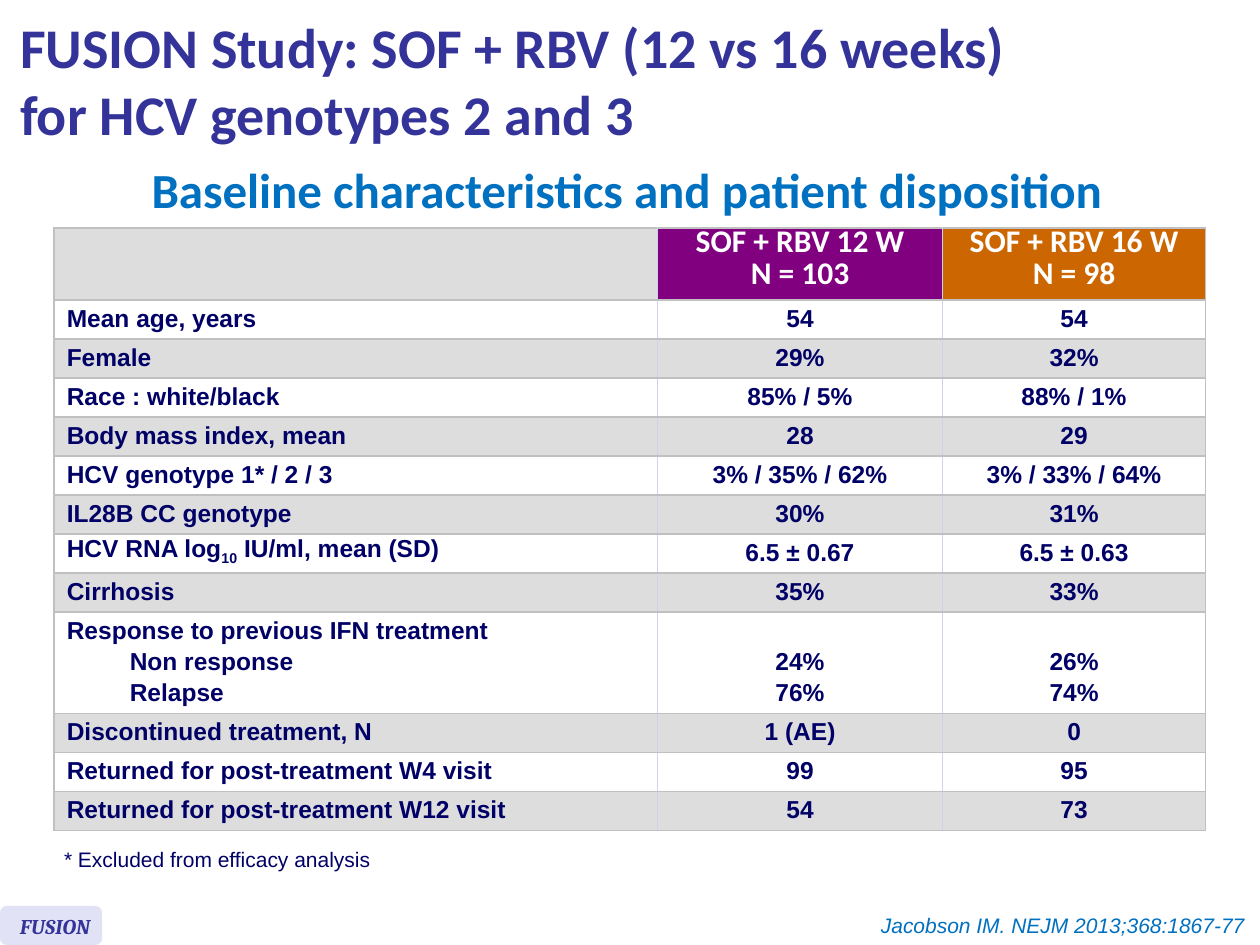
from dataclasses import dataclass
from typing import NamedTuple

from lxml import etree
from pptx import Presentation
from pptx import util as u
from pptx.dml.color import RGBColor
from pptx.enum import shapes, text
from pptx.oxml.ns import qn

COLS, ROWS = 100, 75
SIDE, LEFT, MID = text.PP_ALIGN.RIGHT, text.PP_ALIGN.LEFT, text.PP_ALIGN.CENTER


@dataclass(frozen=True)
class Theme:
    navy: str = "000066"
    indigo: str = "333399"
    blue: str = "0070C0"
    white: str = "FFFFFF"
    band: str = "DDDDDD"
    purple: str = "800080"
    orange: str = "CC6600"
    badge: str = "E2E2F6"
    grey: str = "C0C0C0"
    lilac: str = "D0D0F0"
    head: str = "Calibri"
    body: str = "Arial"
    serif: str = "Cambria"
    title: int = 32
    sub: int = 28
    top: int = 18
    cell: int = 14
    note: int = 12


class Box(NamedTuple):
    x: float
    y: float
    w: float
    h: float


class Row(NamedTuple):
    label: str
    short: str
    long: str
    high: float = 3.1


T = Theme()
TABLE = Box(4.3, 18.1, 91.4, 48)
WIDTHS = (47.9, 22.6, 20.9)
DATA = (
    Row("", "SOF + RBV 12 W\nN = 103", "SOF + RBV 16 W\nN = 98", 5.7),
    Row("Mean age, years", "54", "54"),
    Row("Female", "29%", "32%"),
    Row("Race : white/black", "85% / 5%", "88% / 1%"),
    Row("Body mass index, mean", "28", "29"),
    Row("HCV genotype 1* / 2 / 3", "3% / 35% / 62%", "3% / 33% / 64%"),
    Row("IL28B CC genotype", "30%", "31%"),
    Row("HCV RNA log_10_ IU/ml, mean (SD)", "6.5 ± 0.67", "6.5 ± 0.63"),
    Row("Cirrhosis", "35%", "33%"),
    Row("Response to previous IFN treatment\n>Non response\n>Relapse",
        "24%\n76%", "26%\n74%", 8),
    Row("Discontinued treatment, N", "1 (AE)", "0"),
    Row("Returned for post-treatment W4 visit", "99", "95"),
    Row("Returned for post-treatment W12 visit", "54", "73"),
)


def across(n: float) -> int:
    return round(u.Inches(10) * n / COLS)


def down(n: float) -> int:
    return round(u.Inches(7.5) * n / ROWS)


def place(box: Box) -> tuple:
    return across(box.x), down(box.y), across(box.w), down(box.h)


def tint(fill, color: str) -> None:
    fill.solid()
    fill.fore_color.rgb = RGBColor.from_string(color)


def write(frame, words: str, *, size: int, color: str, face: str = T.body,
          bold: bool = False, slant: bool = False, align=LEFT,
          pitch: float = 0, gap: float = 0) -> None:
    for n, line in enumerate(words.split("\n")):
        para = frame.add_paragraph() if n else frame.paragraphs[0]
        para.alignment = align
        para.space_before = u.Pt(gap if n else 0)
        if pitch:
            para.line_spacing = u.Pt(pitch)
        if line.startswith(">"):
            para.level = 1
            props = para._p.get_or_add_pPr()
            props.set("marL", str(across(5)))
            props.set("indent", "0")
        for k, part in enumerate(line.lstrip(">").split("_")):
            for j, piece in enumerate(part.split("\v")):
                if j:
                    para.add_line_break()
                    etree.SubElement(para._p[-1], qn("a:rPr"), sz=str(size * 100))
                run = para.add_run()
                run.text = piece
                font = run.font
                font.name, font.size = face, u.Pt(size)
                font.bold, font.italic = bold, slant
                font.color.rgb = RGBColor.from_string(color)
                if k % 2:
                    font._element.set("baseline", "-25000")


def label(slide, box: Box, words: str, wrap: bool = True, **form) -> None:
    frame = slide.shapes.add_textbox(*place(box)).text_frame
    frame.word_wrap = wrap
    write(frame, words, **form)


def border(cell, col: int) -> None:
    left = T.lilac if col else T.grey
    right = T.grey if col == len(WIDTHS) - 1 else T.lilac
    props = cell._tc.get_or_add_tcPr()
    for side, color in zip("LRTB", (left, right, T.grey, T.grey)):
        line = etree.SubElement(props, qn(f"a:ln{side}"), w=str(u.Pt(1)))
        fill = etree.SubElement(line, qn("a:solidFill"))
        etree.SubElement(fill, qn("a:srgbClr"), val=color)


def grid(slide) -> None:
    table = slide.shapes.add_table(len(DATA), len(WIDTHS), *place(TABLE)).table
    table.first_row = table.horz_banding = False
    for col, wide in zip(table.columns, WIDTHS):
        col.width = across(wide)
    for r, row in enumerate(DATA):
        table.rows[r].height = down(row.high)
        for c, words in enumerate((row.label, row.short, row.long)):
            cell = table.cell(r, c)
            border(cell, c)
            shade = T.white if r % 2 else T.band
            tint(cell.fill, shade if r else (T.band, T.purple, T.orange)[c])
            split = r and c and "\n" in words
            cell.vertical_anchor = text.MSO_ANCHOR.BOTTOM if split else text.MSO_ANCHOR.MIDDLE
            look = (dict(size=T.cell, color=T.navy) if r else
                    dict(size=T.top, color=T.white, face=T.head))
            if words:
                write(cell.text_frame, words, bold=True, pitch=15,
                      gap=look["size"] / 5, align=MID if c else LEFT, **look)


def main() -> None:
    deck = Presentation()
    deck.slide_width, deck.slide_height = across(COLS), down(ROWS)
    slide = deck.slides.add_slide(deck.slide_layouts[5])

    title = slide.shapes.title
    title.left, title.top, title.width, title.height = place(Box(0.6, 0.3, 95.5, 12.1))
    title.text_frame.auto_size = text.MSO_AUTO_SIZE.NONE
    title.text_frame.vertical_anchor = text.MSO_ANCHOR.MIDDLE
    write(title.text_frame,
          "FUSION Study: SOF + RBV (12 vs 16 weeks)\vfor HCV genotypes 2 and 3",
          size=T.title, color=T.indigo, face=T.head, bold=True)

    grid(slide)
    label(slide, Box(10.6, 12.2, 78.3, 5.7),
          "Baseline characteristics and patient disposition",
          size=T.sub, color=T.blue, face=T.head, bold=True, align=MID)
    label(slide, Box(4.1, 66.7, 26.5, 3), "* Excluded from efficacy analysis",
          wrap=False, size=T.note, color=T.navy)

    badge = slide.shapes.add_shape(shapes.MSO_SHAPE.ROUNDED_RECTANGLE,
                                   *place(Box(0, 71.9, 8.1, 3.1)))
    badge.shadow.inherit = False
    tint(badge.fill, T.badge)
    badge.line.fill.background()
    label(slide, Box(0.6, 72, 8.8, 3), "FUSION", size=T.note, color=T.indigo,
          face=T.serif, bold=True, slant=True)
    label(slide, Box(61.7, 71.9, 38.1, 3), "Jacobson IM. NEJM 2013;368:1867-77",
          size=T.note, color=T.blue, slant=True, align=SIDE)
    deck.save("out.pptx")


if __name__ == "__main__":
    main()
